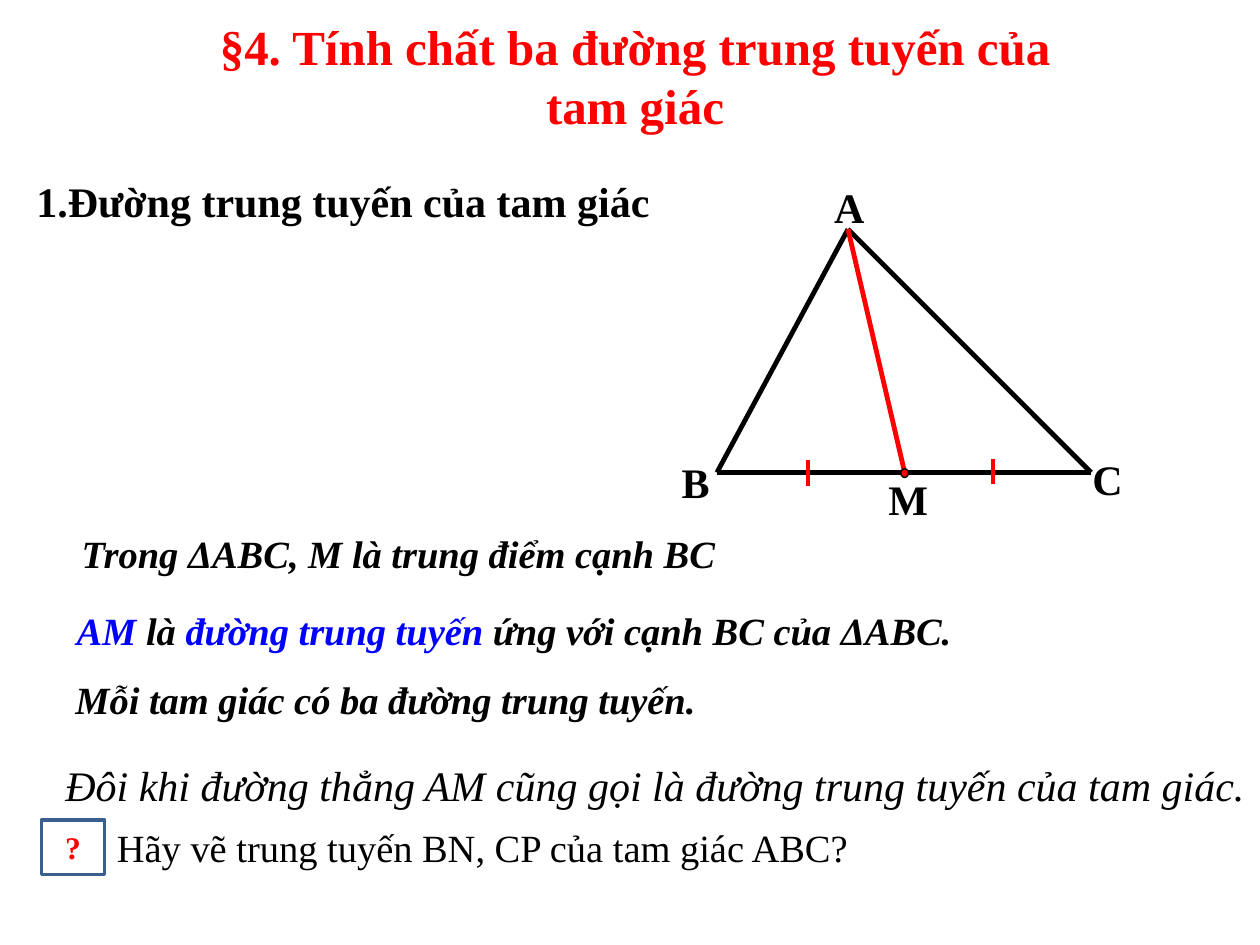
from pptx import Presentation
from pptx.dml.color import RGBColor
from pptx.enum.shapes import MSO_CONNECTOR, MSO_SHAPE
from pptx.enum.text import MSO_ANCHOR, PP_ALIGN
from pptx.oxml.ns import qn
from pptx.util import Inches, Pt
from lxml import etree

BLACK, RED, BLUE = "000000", "FF0000", "0000FF"


def color(value):
    return RGBColor.from_string(value)


def write(box, spans, size, bold=False, italic=False, align=PP_ALIGN.LEFT):
    """Fill a box with one paragraph of (text, colour) spans."""
    para = box.text_frame.paragraphs[0]
    para.alignment = align
    para.font.name = "Times New Roman"
    para.font.size = Pt(size)
    para.font.bold, para.font.italic = bold, italic
    for text, tint in spans:
        span = para.add_run()
        span.text = text
        span.font.color.rgb = color(tint)


deck = Presentation()
deck.slide_width, deck.slide_height = Inches(10), Inches(7.5)
page = deck.slides.add_slide(deck.slide_layouts[6])

# Triangle ABC, its median AM and the equal-length ticks on BC
A, B, C, M = (6.73, 1.82), (5.69, 3.75), (8.66, 3.75), (7.18, 3.75)
lines = [
    (B, C, BLACK, 2.75),
    (A, B, BLACK, 2.75),
    (A, C, BLACK, 2.75),
    (A, M, RED, 2.75),
    ((6.41, 3.65), (6.41, 3.86), RED, 2.25),
    ((7.88, 3.64), (7.88, 3.84), RED, 2.25),
]
for start, end, tint, width in lines:
    line = page.shapes.add_connector(
        MSO_CONNECTOR.STRAIGHT, *[Inches(value) for value in start + end])
    line.line.color.rgb = color(tint)
    line.line.width = Pt(width)
    etree.SubElement(line._element.spPr, qn("a:effectLst"))

# Midpoint dot
dot = page.shapes.add_shape(
    MSO_SHAPE.OVAL, Inches(7.15), Inches(3.72), Inches(0.06), Inches(0.07))
dot.shadow.inherit = False
dot.fill.solid()
dot.fill.fore_color.rgb = color(RED)
dot.line.color.rgb = color(BLACK)
dot.line.width = Pt(0)

# Vertex labels
labels = [("A", 6.62, 1.44, 0.24), ("B", 5.41, 3.62, 0.22),
          ("C", 8.67, 3.6, 0.24), ("M", 7.05, 3.76, 0.32)]
for name, left, top, width in labels:
    box = page.shapes.add_textbox(
        Inches(left), Inches(top), Inches(width), Inches(0.4))
    frame = box.text_frame
    frame.word_wrap = False
    frame.margin_left = frame.margin_right = 0
    frame.margin_top = frame.margin_bottom = 0
    write(box, [(name, BLACK)], 24, bold=True)

# Title, heading and statements: place, spans, size, bold, italic, alignment
texts = [
    ((1.29, 0.08, 7.5, 1.04),
     [("§4. Tính chất ba đường trung tuyến của tam giác", RED)],
     28, True, False, PP_ALIGN.CENTER),
    ((0.19, 1.34, 6.92, 0.5), [("1.Đường trung tuyến của tam giác", BLACK)],
     24, True, False, PP_ALIGN.LEFT),
    ((0.55, 4.16, 6.2, 0.47), [("Trong ΔABC, M là trung điểm cạnh BC", BLACK)],
     22, True, True, PP_ALIGN.LEFT),
    ((0.51, 4.77, 9.02, 0.47),
     [("AM ", BLUE), ("là ", BLACK), ("đường trung tuyến ", BLUE),
      ("ứng với cạnh BC của ΔABC.", BLACK)],
     22, True, True, PP_ALIGN.LEFT),
    ((0.5, 5.32, 9.25, 0.47), [("Mỗi tam giác có ba đường trung tuyến.", BLACK)],
     22, True, True, PP_ALIGN.LEFT),
    ((0.42, 5.98, 9.58, 0.5),
     [("Đôi khi đường thẳng AM cũng gọi là đường trung tuyến của tam giác.", BLACK)],
     24, False, True, PP_ALIGN.LEFT),
    ((0.83, 6.49, 6.07, 0.47),
     [("Hãy vẽ trung tuyến BN, CP của tam giác ABC?", BLACK)],
     22, False, False, PP_ALIGN.LEFT),
]
for place, spans, size, bold, italic, align in texts:
    box = page.shapes.add_textbox(*[Inches(value) for value in place])
    box.text_frame.word_wrap = True
    write(box, spans, size, bold, italic, align)

# Question mark box
question = page.shapes.add_shape(
    MSO_SHAPE.RECTANGLE, Inches(0.33), Inches(6.51), Inches(0.5), Inches(0.43))
question.shadow.inherit = False
question.fill.background()
question.line.color.rgb = color("3A5F8C")
question.line.width = Pt(2)
question.text_frame.vertical_anchor = MSO_ANCHOR.MIDDLE
write(question, [("?", RED)], 18, bold=True, align=PP_ALIGN.CENTER)

deck.save("out.pptx")
